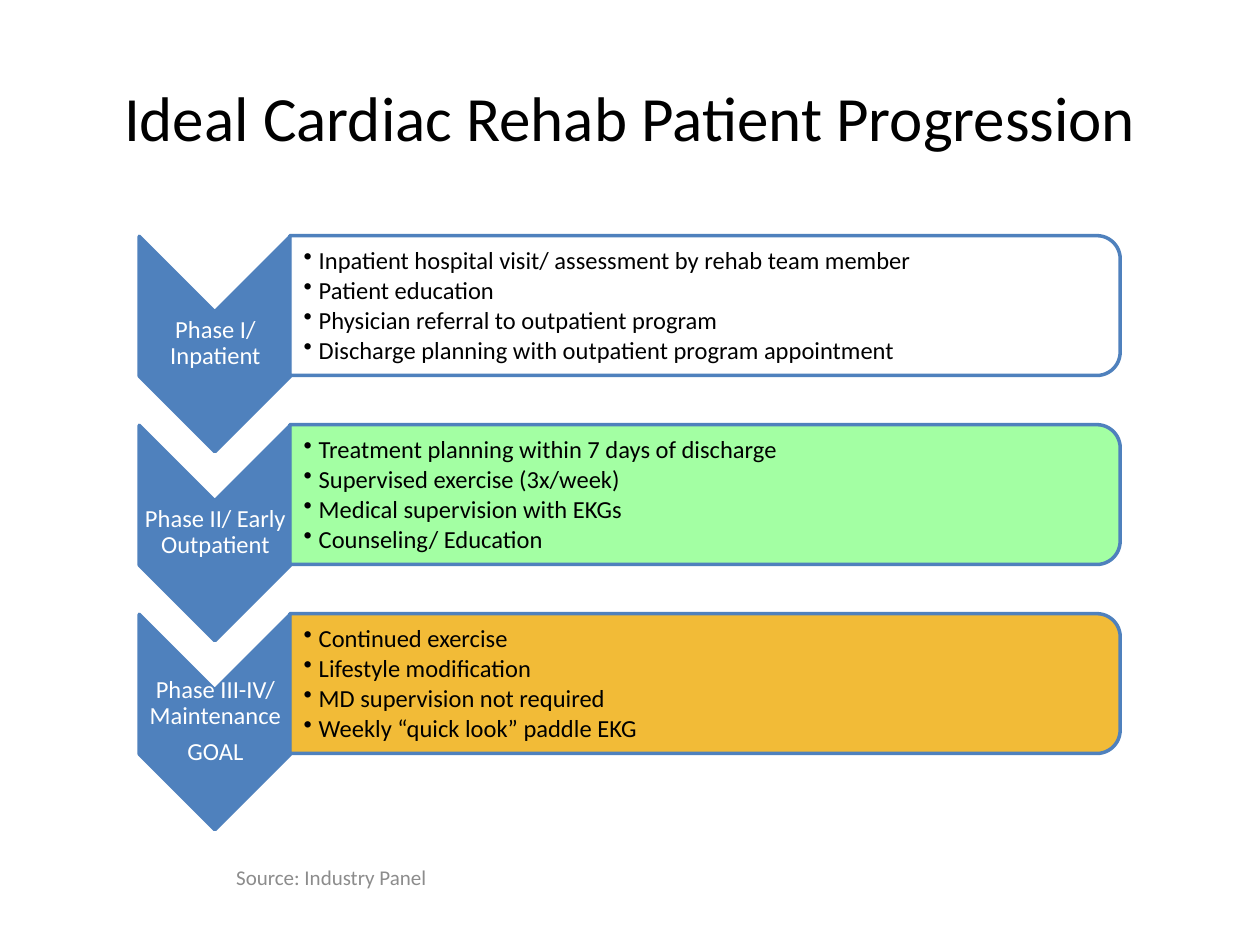
from lxml import etree
from pptx import Presentation
from pptx.dml.color import RGBColor
from pptx.enum.shapes import MSO_SHAPE
from pptx.enum.text import MSO_ANCHOR, PP_ALIGN
from pptx.oxml.ns import qn
from pptx.util import Inches, Pt

CHEVRON = MSO_SHAPE.CHEVRON
ROUNDED_PANEL = MSO_SHAPE.ROUND_2_SAME_RECTANGLE
MIDDLE = MSO_ANCHOR.MIDDLE
LEFT = PP_ALIGN.LEFT
CENTER = PP_ALIGN.CENTER

COLORS = {
    "black": "000000",
    "white": "FFFFFF",
    "blue": "4F81BD",
    "green": "99FF99",
    "amber": "F1B422",
    "gray": "8C8C8C",
}

PHASES = [
    (["Phase I/ Inpatient"], "white", [
        "Inpatient hospital visit/ assessment by rehab team member",
        "Patient education",
        "Physician referral to outpatient program",
        "Discharge planning with outpatient program appointment",
    ]),
    (["Phase II/ Early Outpatient"], "green", [
        "Treatment planning within 7 days of discharge",
        "Supervised exercise (3x/week)",
        "Medical supervision with EKGs",
        "Counseling/ Education",
    ]),
    (["Phase III-IV/ Maintenance", "GOAL"], "amber", [
        "Continued exercise",
        "Lifestyle modification",
        "MD supervision not required",
        "Weekly “quick look” paddle EKG",
    ]),
]
FIRST_TOP = 1.93
ROW_PITCH = 1.5


class SlideBuilder:
    font_name = "Calibri"
    line_width = Pt(2)
    bullet_indent = Inches(0.12)

    def __init__(self, slide):
        self.slide = slide

    def color(self, name):
        return RGBColor.from_string(COLORS[name])

    def turned_shape(self, kind, left, top, width, height, fill, opacity=100):
        shape = self.slide.shapes.add_shape(
            kind, Inches(left), Inches(top), Inches(width), Inches(height))
        shape.rotation = 90
        shape.shadow.inherit = False
        shape.fill.solid()
        shape.fill.fore_color.rgb = self.color(fill)
        if opacity < 100:
            color_element = shape.fill._xPr.find(qn("a:solidFill"))[0]
            etree.SubElement(color_element, qn("a:alpha"), val=str(opacity * 1000))
        shape.line.color.rgb = self.color("blue")
        shape.line.width = self.line_width

    def add_bullet(self, paragraph):
        properties = paragraph._p.get_or_add_pPr()
        properties.set("marL", str(self.bullet_indent))
        properties.set("indent", str(-self.bullet_indent))
        etree.SubElement(properties, qn("a:buChar"), char="•")

    def text(self, lines, left, top, width, height, size, color, align=CENTER,
             margins=(0.1, 0.05, 0.1, 0.05), spacing=1.0, after=0, bullets=False):
        box = self.slide.shapes.add_textbox(
            Inches(left), Inches(top), Inches(width), Inches(height))
        frame = box.text_frame
        frame.word_wrap = True
        frame.vertical_anchor = MIDDLE
        (frame.margin_left, frame.margin_top,
         frame.margin_right, frame.margin_bottom) = map(Inches, margins)
        frame.text = "\n".join(lines)
        for paragraph in frame.paragraphs:
            paragraph.alignment = align
            paragraph.line_spacing = spacing
            paragraph.space_after = Pt(after)
            if bullets:
                self.add_bullet(paragraph)
            paragraph.font.name = self.font_name
            paragraph.font.size = Pt(size)
            paragraph.font.color.rgb = self.color(color)

    def phase(self, top, label, fill, steps):
        self.turned_shape(CHEVRON, 0.85, top + 0.2, 1.71, 1.2, "blue")
        self.text(label, 1.11, top + 0.54, 1.2, 0.51, 14, "white",
                  margins=(0.01,) * 4, spacing=0.9, after=5)
        self.turned_shape(ROUNDED_PANEL, 5.04, top - 2.8, 1.11, 6.59, fill, opacity=90)
        self.text(steps, 2.3, top, 6.54, 1, 14, "black", align=LEFT,
                  margins=(0.11, 0.01, 0.01, 0.01), spacing=0.9, after=2, bullets=True)


def main():
    deck = Presentation()
    deck.slide_width = Inches(10)
    deck.slide_height = Inches(7.5)
    builder = SlideBuilder(deck.slides.add_slide(deck.slide_layouts[6]))
    builder.text(["Ideal Cardiac Rehab Patient Progression"],
                 0.5, 0.3, 9, 1.25, 36, "black")
    for row, (label, fill, steps) in enumerate(PHASES):
        builder.phase(FIRST_TOP + row * ROW_PITCH, label, fill, steps)
    builder.text(["Source: Industry Panel"], 0.38, 6.9, 4.5, 0.13, 12, "gray")
    deck.save("out.pptx")


if __name__ == "__main__":
    main()
